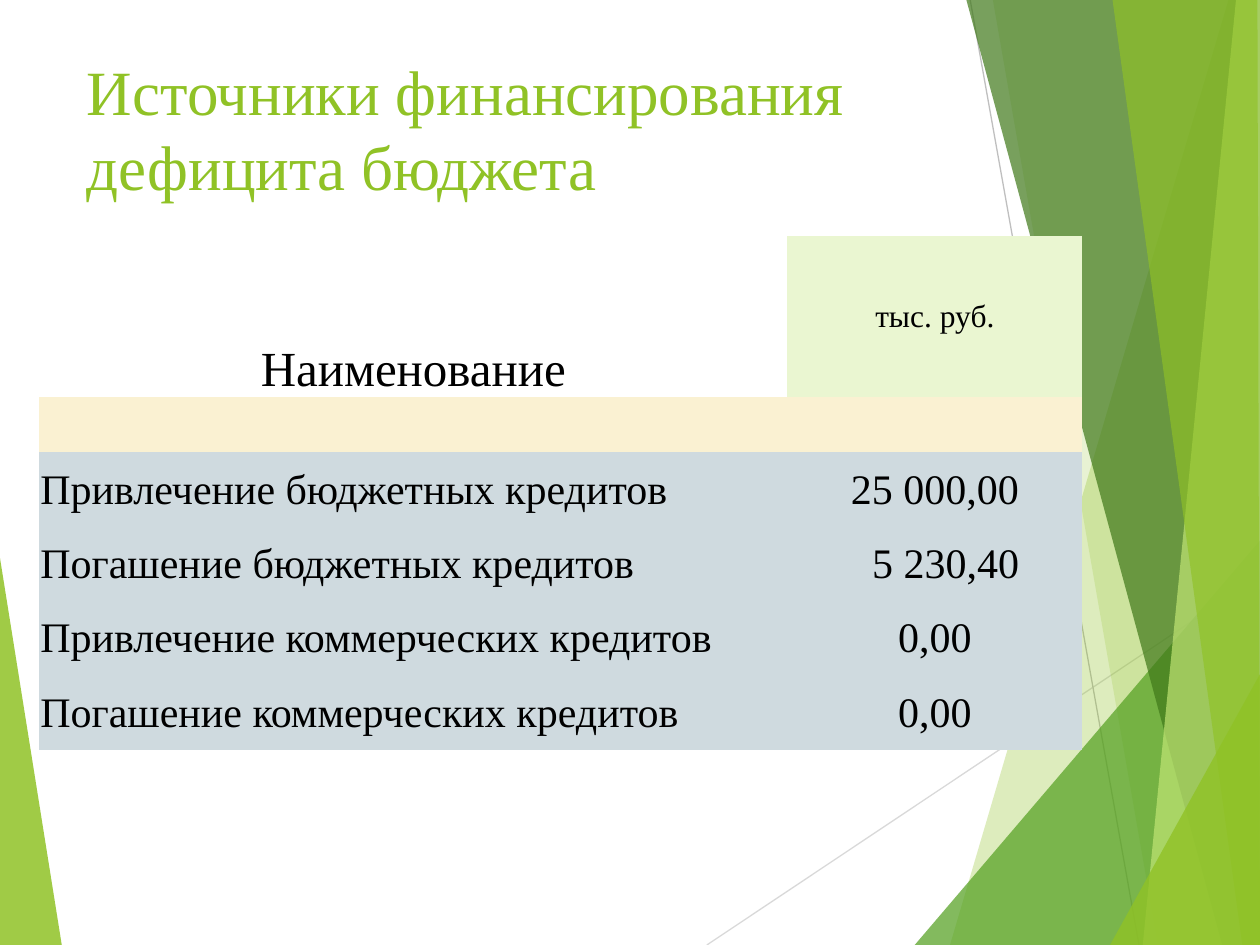
from lxml import etree
from pptx import Presentation
from pptx import util as u
from pptx.dml.color import RGBColor
from pptx.enum import shapes, text
from pptx.oxml.ns import qn

FONT = "Times New Roman"
COLORS = {
    "lime": "90C226", "green": "54A021", "forest": "3F7819", "light": "C0E474",
    "pale line": "D9D9D9", "gray line": "BFBFBF", "ink": "000000",
    "unit": "EAF6D1", "divider": "FAF1D2", "body": "CFDADF",
}
TITLE = "Источники финансирования дефицита бюджета"
HEADER = ("Наименование", "тыс. руб.")
SOURCES = [
    ("Привлечение бюджетных кредитов", "25 000,00"),
    ("Погашение бюджетных кредитов", "5 230,40"),
    ("Привлечение коммерческих кредитов", "0,00"),
    ("Погашение коммерческих кредитов", "0,00"),
]
COLUMN_WIDTHS = (5.94, 2.34)
ROW_HEIGHTS = [1.28, 0.44] + [0.59] * len(SOURCES)
WIDTH, HEIGHT = 10, 7.5
LEFT_FACET = ("lime", 85, [(0, 4.43), (0.49, HEIGHT), (0, HEIGHT)])
RAYS = [
    ("pale line", (5.61, HEIGHT), (WIDTH, 4.57)),
    ("gray line", (7.7, 0), (9.04, HEIGHT)),
]
RIGHT_FACETS = [
    ("lime", 30, [(9.75, 0), (7.54, HEIGHT), (WIDTH, HEIGHT), (WIDTH, 0)]),
    ("lime", 20, [(7.88, 0), (9.19, HEIGHT), (WIDTH, HEIGHT), (WIDTH, 0)]),
    ("green", 72, [(7.26, HEIGHT), (WIDTH, 4.29), (WIDTH, HEIGHT)]),
    ("forest", 70, [(7.67, 0), (9.7, HEIGHT), (WIDTH, HEIGHT), (WIDTH, 0)]),
    ("light", 70, [(9.81, 0), (9.07, HEIGHT), (WIDTH, HEIGHT), (WIDTH, 0)]),
    ("lime", 65, [(8.83, 0), (9.86, HEIGHT), (WIDTH, HEIGHT), (9.98, 0)]),
    ("lime", 80, [(8.81, HEIGHT), (WIDTH, 5.35), (WIDTH, HEIGHT)]),
]
NO_STYLE = "{2D5ABB26-0587-4C30-8999-92F81FD0307C}"


def color(name):
    return RGBColor.from_string(COLORS[name])


def add_facet(slide, name, opacity, points):
    corners = [(u.Inches(x), u.Inches(y)) for x, y in points]
    builder = slide.shapes.build_freeform(*corners[0])
    builder.add_line_segments(corners[1:])
    shape = builder.convert_to_shape()
    shape.shadow.inherit = False
    shape.fill.solid()
    shape.fill.fore_color.rgb = color(name)
    shape.line.fill.background()
    fill = shape.element.spPr.find(qn("a:solidFill"))
    etree.SubElement(fill[0], qn("a:alpha"), val=str(opacity * 1000))


def add_ray(slide, name, start, end):
    ends = [u.Inches(value) for value in start + end]
    ray = slide.shapes.add_connector(shapes.MSO_CONNECTOR.STRAIGHT, *ends)
    ray.line.color.rgb = color(name)
    ray.line.width = u.Pt(0.75)
    etree.SubElement(ray.element.spPr, qn("a:effectLst"))


def format_text(text_frame, size, name, alignment):
    for paragraph in text_frame.paragraphs:
        paragraph.alignment = alignment
        for run in paragraph.runs:
            run.font.name = FONT
            run.font.size = u.Pt(size)
            run.font.color.rgb = color(name)


def place_title(slide):
    title = slide.shapes.title
    title.left, title.top, title.width, title.height = (
        u.Inches(value) for value in (0.59, 0.36, 6.94, 1.44))
    title.text_frame.text = TITLE
    title.text_frame.word_wrap = True
    title.text_frame.vertical_anchor = text.MSO_ANCHOR.MIDDLE
    title.text_frame.margin_bottom = u.Inches(0.18)
    format_text(title.text_frame, 36, "lime", text.PP_ALIGN.LEFT)
    slide.shapes.element.append(title.element)


def fill_cell(cell, content, size, fill, alignment, anchor=text.MSO_ANCHOR.MIDDLE):
    if fill:
        cell.fill.solid()
        cell.fill.fore_color.rgb = color(fill)
    else:
        cell.fill.background()
    if content:
        cell.text_frame.text = content
        cell.vertical_anchor = anchor
        cell.margin_left = cell.margin_right = cell.margin_top = u.Inches(0.01)
        cell.margin_bottom = 0
        format_text(cell.text_frame, size, "ink", alignment)


def add_sources_table(slide):
    frame = slide.shapes.add_table(
        len(ROW_HEIGHTS), len(COLUMN_WIDTHS), u.Inches(0.31), u.Inches(1.87),
        u.Inches(sum(COLUMN_WIDTHS)), u.Inches(sum(ROW_HEIGHTS)))
    table = frame.table
    table.first_row = table.horz_banding = False
    frame.element.find(".//" + qn("a:tableStyleId")).text = NO_STYLE
    for column, width in zip(table.columns, COLUMN_WIDTHS):
        column.width = u.Inches(width)
    for row, height in zip(table.rows, ROW_HEIGHTS):
        row.height = u.Inches(height)

    left, center = text.PP_ALIGN.LEFT, text.PP_ALIGN.CENTER
    fill_cell(table.cell(0, 0), HEADER[0], 28, None, center, text.MSO_ANCHOR.BOTTOM)
    fill_cell(table.cell(0, 1), HEADER[1], 18, "unit", center)
    for column in range(len(COLUMN_WIDTHS)):
        fill_cell(table.cell(1, column), "", 18, "divider", center)
    for row, (source, amount) in enumerate(SOURCES, start=2):
        fill_cell(table.cell(row, 0), source, 24, "body", left)
        fill_cell(table.cell(row, 1), amount, 24, "body", center)
    table.cell(3, 1).margin_left = u.Inches(0.18)


def main():
    presentation = Presentation()
    presentation.slide_width = u.Inches(WIDTH)
    presentation.slide_height = u.Inches(HEIGHT)
    slide = presentation.slides.add_slide(presentation.slide_layouts[5])
    add_facet(slide, *LEFT_FACET)
    for ray in RAYS:
        add_ray(slide, *ray)
    for facet in RIGHT_FACETS:
        add_facet(slide, *facet)
    place_title(slide)
    add_sources_table(slide)
    presentation.save("out.pptx")


if __name__ == "__main__":
    main()
